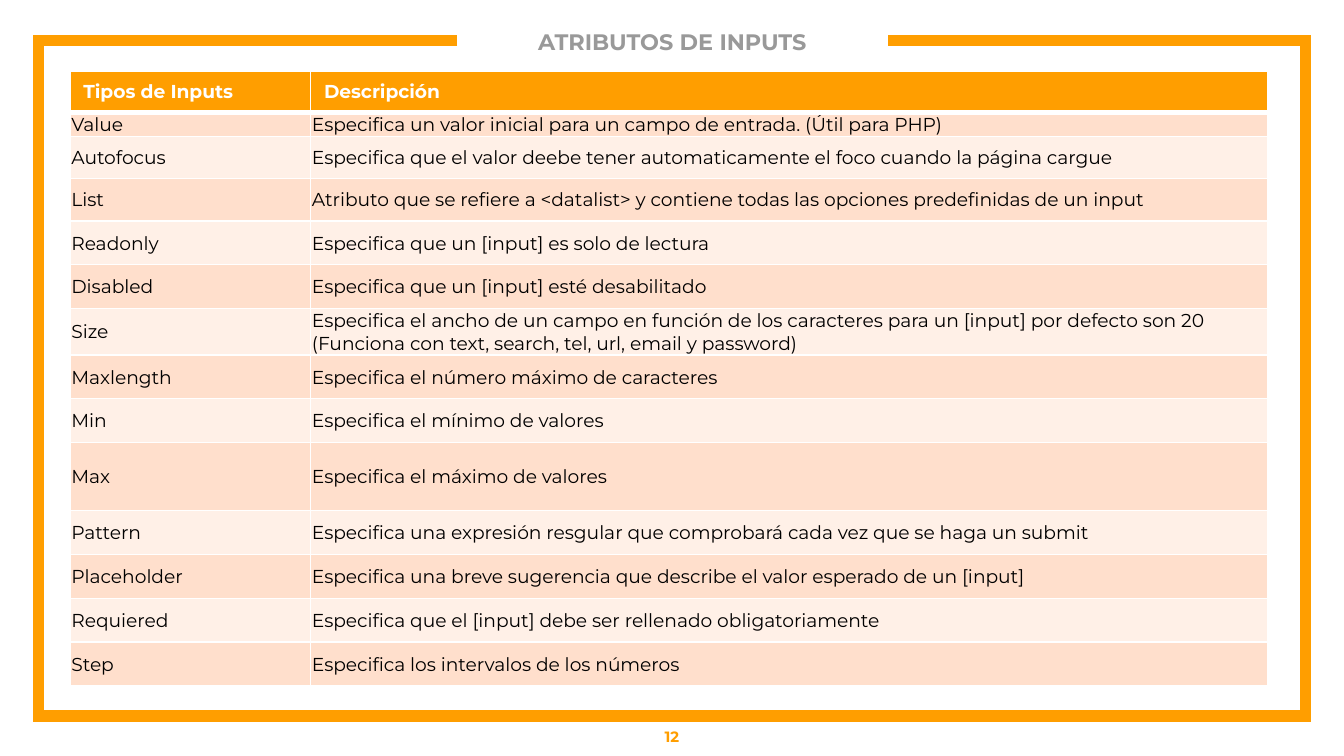
from lxml import etree
from pptx import Presentation
from pptx.dml.color import RGBColor
from pptx.enum.text import MSO_ANCHOR, PP_ALIGN
from pptx.oxml.ns import qn
from pptx.util import Pt

CENTER, LEFT = PP_ALIGN.CENTER, PP_ALIGN.LEFT
MIDDLE = MSO_ANCHOR.MIDDLE
TITLE_ONLY = 5

FONT = "Montserrat"
ORANGE, GREY, WHITE, BLACK = "FF9E00", "999999", "FFFFFF", "000000"
BAND_FILLS = ("FFDFCC", "FFF0E7")
SLIDE_WIDTH, SLIDE_HEIGHT = 720, 405

HEADER = ("Tipos de Inputs", "Descripción")
# Attribute, description, row height in points
ATTRIBUTES = [
    ("Value", "Especifica un valor inicial para un campo de entrada. (Útil para PHP)", 12.3),
    ("Autofocus", "Especifica que el valor deebe tener automaticamente el foco cuando la página cargue", 22.6),
    ("List", "Atributo que se refiere a <datalist> y contiene todas las opciones predefinidas de un input", 22.6),
    ("Readonly", "Especifica que un [input] es solo de lectura", 23.5),
    ("Disabled", "Especifica que un [input] esté desabilitado", 23.5),
    ("Size", "Especifica el ancho de un campo en función de los caracteres para un [input] "
             "por defecto son 20 (Funciona con text, search, tel, url, email y password)", 23.5),
    ("Maxlength", "Especifica el número máximo de caracteres", 23.5),
    ("Min", "Especifica el mínimo de valores", 23.5),
    ("Max", "Especifica el máximo de valores", 36.5),
    ("Pattern", "Especifica una expresión resgular que comprobará cada vez que se haga un submit", 23.5),
    ("Placeholder", "Especifica una breve sugerencia que describe el valor esperado de un [input]", 23.5),
    ("Requiered", "Especifica que el [input] debe ser rellenado obligatoriamente", 23.5),
    ("Step", "Especifica los intervalos de los números", 23.5),
]


def color(hex_string):
    return RGBColor.from_string(hex_string)


def set_attributes(target, values):
    for name, value in values.items():
        setattr(target, name, value)


def write_text(text_frame, text, size, text_color, bold=False, alignment=LEFT):
    text_frame.text = text
    paragraph = text_frame.paragraphs[0]
    paragraph.alignment = alignment
    font = paragraph.runs[0].font
    set_attributes(font, {"name": FONT, "size": Pt(size), "bold": bold})
    font.color.rgb = color(text_color)


def place_text(shape, box, inset, text, size, text_color):
    """Centre bold text in a title or text box."""
    set_attributes(shape, dict(zip(("left", "top", "width", "height"), map(Pt, box))))
    frame = shape.text_frame
    margins = ("margin_left", "margin_top", "margin_right", "margin_bottom")
    set_attributes(frame, dict.fromkeys(margins, Pt(inset)))
    set_attributes(frame, {"word_wrap": True, "vertical_anchor": MIDDLE})
    write_text(frame, text, size, text_color, bold=True, alignment=CENTER)


def add_frame(slide, box, gap_left, gap_right):
    """Outline the box, leaving a gap in its top edge for the title."""
    left, top, width, height = box
    right, bottom = left + width, top + height
    corners = [(left, top), (left, bottom), (right, bottom), (right, top), (gap_right, top)]
    builder = slide.shapes.build_freeform(Pt(gap_left), Pt(top))
    builder.add_line_segments([(Pt(x), Pt(y)) for x, y in corners], close=False)
    frame = builder.convert_to_shape()
    frame.shadow.inherit = False
    frame.fill.background()
    frame.line.color.rgb = color(ORANGE)
    frame.line.width = Pt(6)
    line = frame.line._get_or_add_ln()
    etree.SubElement(line, qn("a:miter"), lim="800000")


def set_borders(cell, top=1, bottom=1):
    """Draw white borders; the widths are in points."""
    properties = cell._tc.get_or_add_tcPr()
    widths = {"a:lnL": 1, "a:lnR": 1, "a:lnT": top, "a:lnB": bottom}
    for index, (tag, width) in enumerate(widths.items()):
        border = etree.Element(qn(tag), w=str(Pt(width)))
        fill = etree.SubElement(border, qn("a:solidFill"))
        etree.SubElement(fill, qn("a:srgbClr"), val=WHITE)
        properties.insert(index, border)


def format_cell(cell, text, fill, text_color, bold=False):
    write_text(cell.text_frame, text, 10, text_color, bold)
    cell.vertical_anchor = MIDDLE
    cell.fill.solid()
    cell.fill.fore_color.rgb = color(fill)


def add_attribute_table(slide, box, first_column_width, header_height):
    left, top, width, height = map(Pt, box)
    table = slide.shapes.add_table(len(ATTRIBUTES) + 1, 2, left, top, width, height).table
    table.columns[0].width = Pt(first_column_width)
    table.columns[1].width = width - Pt(first_column_width)

    # Header row
    table.rows[0].height = Pt(header_height)
    for cell, text in zip(table.rows[0].cells, HEADER):
        format_cell(cell, text, ORANGE, WHITE, bold=True)
        set_borders(cell, bottom=3)

    # Banded attribute rows
    margins = {"margin_left": Pt(0.75), "margin_top": Pt(0.75),
               "margin_right": Pt(0.75), "margin_bottom": Pt(0)}
    for index, (*texts, row_height) in enumerate(ATTRIBUTES):
        row = table.rows[index + 1]
        row.height = Pt(row_height)
        for cell, text in zip(row.cells, texts):
            format_cell(cell, text, BAND_FILLS[index % 2], BLACK)
            set_attributes(cell, margins)
            set_borders(cell, top=3 if index == 0 else 1)


def build_slide(presentation):
    slide = presentation.slides.add_slide(presentation.slide_layouts[TITLE_ONLY])
    add_frame(slide, (20.5, 21.6, 679, 362), 245, 476)
    place_text(slide.shapes.title, (255.5, 8, 209.5, 28), 0, "ATRIBUTOS DE INPUTS", 12, GREY)
    # Page number
    page_number = slide.shapes.add_textbox(0, 0, 0, 0)
    place_text(page_number, (0, 383.7, SLIDE_WIDTH, 21.3), 7.2, "12", 8, ORANGE)
    add_attribute_table(slide, (37.5, 38, 641.5, 329), 128.9, 22.3)


def main():
    presentation = Presentation()
    presentation.slide_width = Pt(SLIDE_WIDTH)
    presentation.slide_height = Pt(SLIDE_HEIGHT)
    build_slide(presentation)
    presentation.save("out.pptx")


if __name__ == "__main__":
    main()
